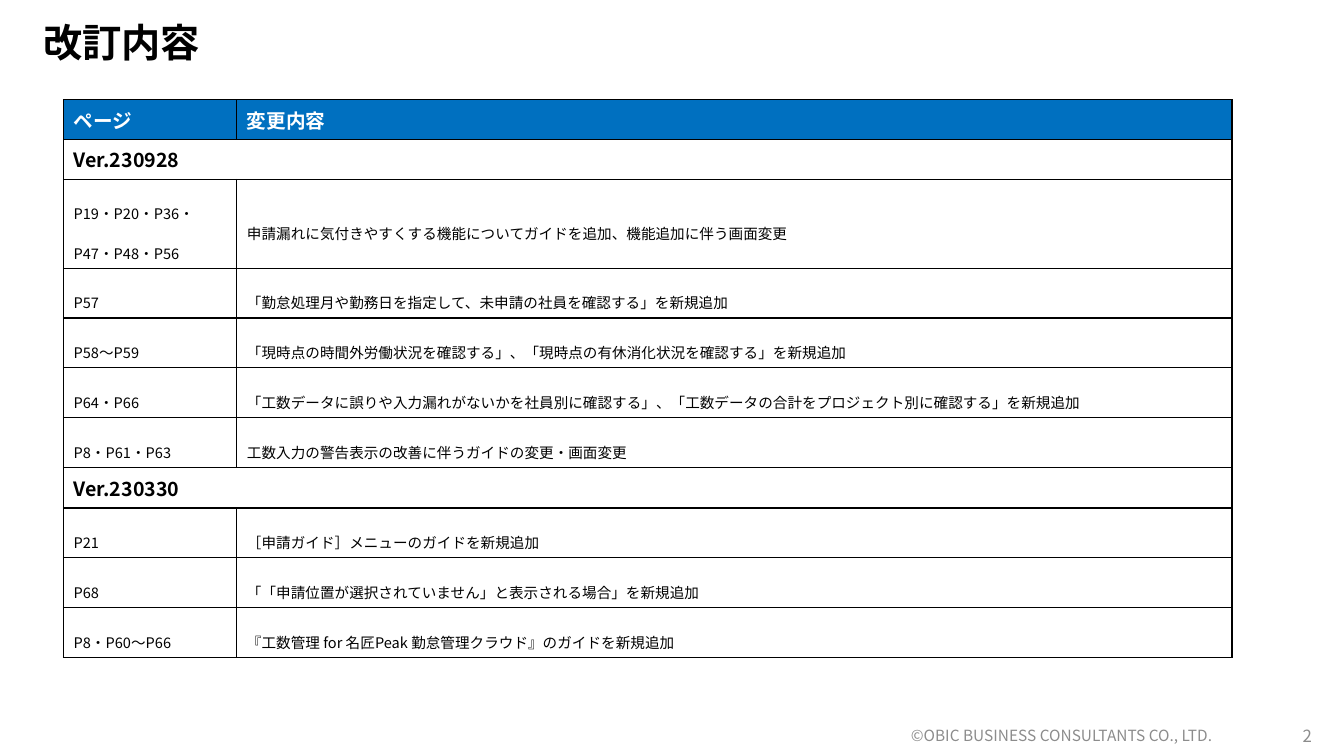
"""Build the revision history slide."""
import pptx
import pptx.dml.color
import pptx.enum.lang
import pptx.enum.text
import pptx.oxml.ns
import pptx.util
from lxml import etree

Inches = pptx.util.Inches
Pt = pptx.util.Pt
RGBColor = pptx.dml.color.RGBColor
ALIGN = pptx.enum.text.PP_ALIGN
MIDDLE = pptx.enum.text.MSO_ANCHOR.MIDDLE
qn = pptx.oxml.ns.qn

TITLE = "改訂内容"
COPYRIGHT = "©OBIC BUSINESS CONSULTANTS CO., LTD."
PAGE_NUMBER = "2"
HEADINGS = ("ページ", "変更内容")
REVISIONS = [
    ("Ver.230928", [
        ("P19・P20・P36・P47・P48・P56", "申請漏れに気付きやすくする機能についてガイドを追加、機能追加に伴う画面変更"),
        ("P57", "「勤怠処理月や勤務日を指定して、未申請の社員を確認する」を新規追加"),
        ("P58～P59", "「現時点の時間外労働状況を確認する」、「現時点の有休消化状況を確認する」を新規追加"),
        ("P64・P66", "「工数データに誤りや入力漏れがないかを社員別に確認する」、「工数データの合計をプロジェクト別に確認する」を新規追加"),
        ("P8・P61・P63", "工数入力の警告表示の改善に伴うガイドの変更・画面変更"),
    ]),
    ("Ver.230330", [
        ("P21", "［申請ガイド］メニューのガイドを新規追加"),
        ("P68", "「「申請位置が選択されていません」と表示される場合」を新規追加"),
        ("P8・P60～P66", "『工数管理 for 名匠Peak 勤怠管理クラウド』のガイドを新規追加"),
    ]),
]

FONT = "Noto Sans CJK JP"
BLACK = RGBColor(0, 0, 0)
WHITE = RGBColor(255, 255, 255)
BLUE = RGBColor(0, 0x70, 0xC0)
GRAY = RGBColor(0x8C, 0x8C, 0x8C)
COLUMN_WIDTHS = (1.72, 9.87)
HEADING_HEIGHT, VERSION_HEIGHT = 0.39, 0.4
CHANGE_HEIGHT, TWO_LINE_HEIGHT = 0.495, 0.88
PAGES_PER_LINE = 3


def write(frame, text, size, color, bold=False, align=ALIGN.LEFT, lowered=False):
    frame.word_wrap = True
    paragraph = frame.paragraphs[0]
    paragraph.alignment = align
    run = paragraph.add_run()
    run.text = text
    font = run.font
    font.name, font.size, font.bold = FONT, Pt(size), bold
    font.color.rgb = color
    font.language_id = pptx.enum.lang.MSO_LANGUAGE_ID.JAPANESE
    properties = run._r.get_or_add_rPr()
    etree.SubElement(properties, qn("a:ea"), typeface=FONT)
    if lowered:
        properties.set("baseline", "-25000")
    return paragraph


def add_text(slide, place, text, size, color, **style):
    box = slide.shapes.add_textbox(*map(Inches, place))
    box.text_frame.vertical_anchor = MIDDLE
    return write(box.text_frame, text, size, color, **style)


def add_borders(cell):
    properties = cell._tc.get_or_add_tcPr()
    for side in ("lnL", "lnR", "lnT", "lnB"):
        line = etree.SubElement(properties, qn("a:" + side), w=str(Pt(1)))
        fill = etree.SubElement(line, qn("a:solidFill"))
        etree.SubElement(fill, qn("a:srgbClr"), val=str(BLACK))


def row_height(texts):
    if texts == HEADINGS:
        return HEADING_HEIGHT
    if len(texts) == 1:
        return VERSION_HEIGHT
    pages = texts[0].split("・")
    return TWO_LINE_HEIGHT if len(pages) > PAGES_PER_LINE else CHANGE_HEIGHT


def add_revision_table(slide):
    rows = [HEADINGS]
    for version, changes in REVISIONS:
        rows += [(version,), *changes]
    table = slide.shapes.add_table(
        len(rows), len(COLUMN_WIDTHS), Inches(0.63), Inches(0.99),
        Inches(sum(COLUMN_WIDTHS)), Inches(sum(map(row_height, rows)))).table
    table.first_row = table.horz_banding = False
    for column, width in zip(table.columns, COLUMN_WIDTHS):
        column.width = Inches(width)
    for row, texts in zip(table.rows, rows):
        heading, version = texts == HEADINGS, len(texts) == 1
        row.height = Inches(row_height(texts))
        cells = list(row.cells)
        for cell in cells:
            add_borders(cell)
            cell.fill.solid()
            cell.fill.fore_color.rgb = BLUE if heading else WHITE
            cell.vertical_anchor = MIDDLE
        if version:
            cells[0].merge(cells[-1])
        strong = heading or version
        for cell, text in zip(cells, texts):
            write(cell.text_frame, text, 14 if strong else 18,
                  WHITE if heading else BLACK, bold=strong, lowered=not strong)


def main():
    deck = pptx.Presentation()
    deck.slide_width, deck.slide_height = Inches(13.33), Inches(7.5)
    slide = deck.slides.add_slide(deck.slide_layouts[6])
    title = add_text(slide, (0.33, 0.12, 12.55, 0.65), TITLE, 28, BLACK, bold=True)
    title.line_spacing = 0.9
    add_text(slide, (8.28, 7.1, 4.5, 0.4), COPYRIGHT, 11, GRAY, align=ALIGN.CENTER)
    add_text(slide, (10.11, 7.1, 3, 0.4), PAGE_NUMBER, 12, GRAY, align=ALIGN.RIGHT)
    add_revision_table(slide)
    deck.save("out.pptx")


if __name__ == "__main__":
    main()
